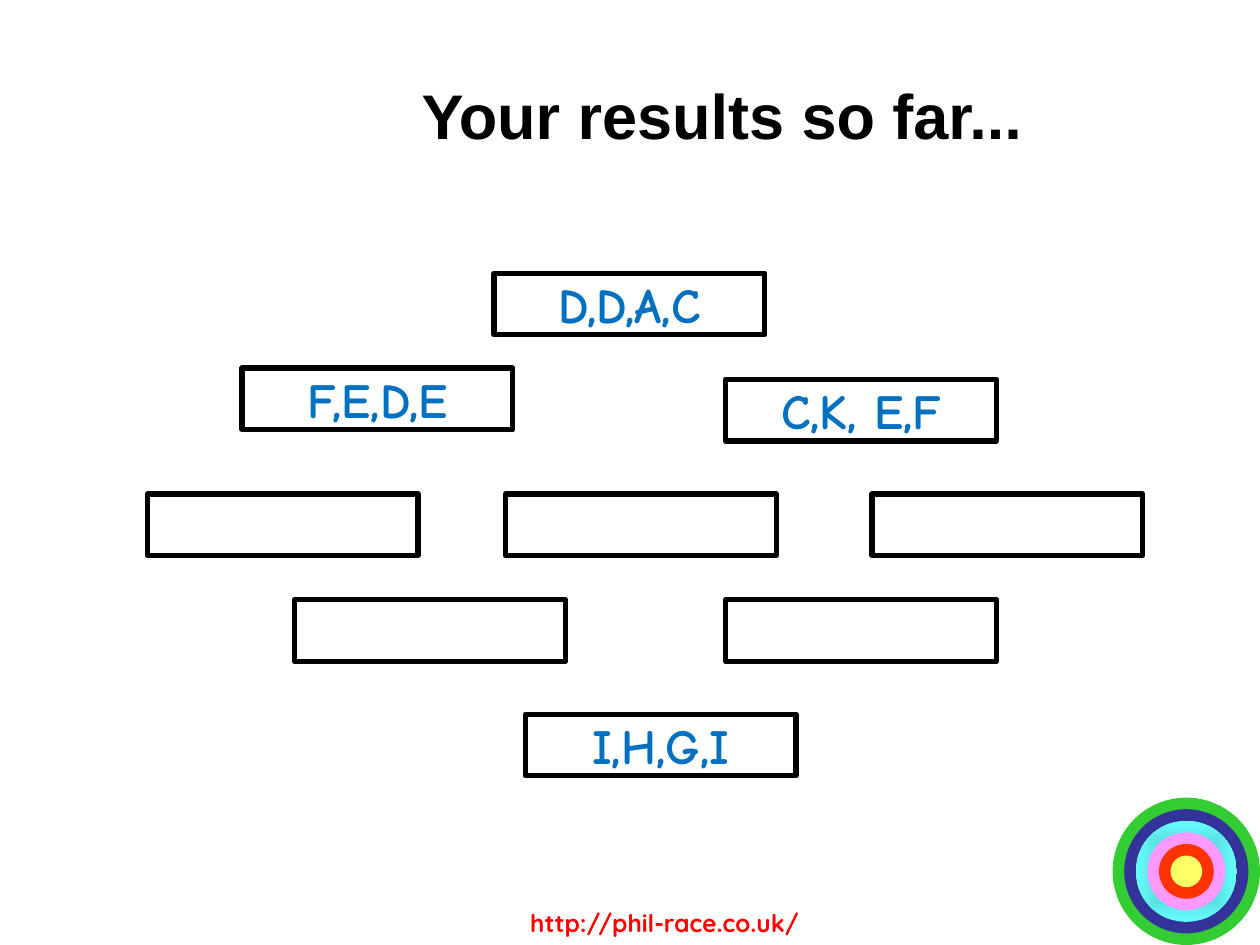
from lxml.etree import SubElement
from pptx import Presentation
from pptx.dml.color import RGBColor
from pptx.enum.shapes import MSO_SHAPE as Preset
from pptx.enum.text import MSO_ANCHOR as Anchor, PP_ALIGN as Align
from pptx.oxml.ns import qn
from pptx.util import Cm, Pt

TITLE_BOX = (3.71, 0.97, 21.69, 3.02)
DIAMOND_BOX = (2.97, 5.51, 20.07, 10.13)
TARGET_BOX = (22.43, 16.08, 2.97, 2.97)
ADDRESS_BOX = (9.73, 18.19, 7.34, 0.86)

TITLE_FONT = {"name": "Arial", "size": Pt(36), "bold": True}
RESULT_FONT = {"name": "Comic Neue", "size": Pt(28), "bold": True}
ADDRESS_FONT = {"name": "Quicksand", "size": Pt(14), "bold": True}

CARD_SIZE = (5.46, 1.24)
# Each row: distance from the top of the diamond, then (left, result) cards
DIAMOND_ROWS = [
    (0, [(6.99, "D,D,A,C")]),
    (1.91, [(1.91, "F,E,D,E")]),
    (2.14, [(11.66, "C,K, E,F")]),
    (4.45, [(0, ""), (7.22, ""), (14.61, "")]),
    (6.58, [(2.97, ""), (11.66, "")]),
    (8.89, [(7.62, "I,H,G,I")]),
]
RING_COLOURS = ["33CC33", "333399", "66FFFF", "FF99FF", "FF3300", "FFFF66"]
GLOW_RING = 2
GLOW_STOPS = [(0, "47B2B2"), (100000, "66FFFF")]


def colour(value):
    return RGBColor.from_string(value)


def lengths(box):
    return [Cm(value) for value in box]


def write(shape, text, font, text_colour):
    """Put one centred, formatted line of text in a shape."""
    para = shape.text_frame.paragraphs[0]
    para.alignment = Align.CENTER
    span = para.add_run()
    span.text = text
    for name, value in font.items():
        setattr(span.font, name, value)
    span.font.color.rgb = colour(text_colour)
    return para


def add_title(page, box):
    title = page.shapes.title
    title.left, title.top, title.width, title.height = lengths(box)
    title.text_frame.vertical_anchor = Anchor.MIDDLE
    para = write(title, "Your results so far...", TITLE_FONT, "000000")
    para.line_spacing = 0.75


def add_card(page, left, top, result):
    card = page.shapes.add_shape(Preset.RECTANGLE, *lengths((left, top, *CARD_SIZE)))
    card.shadow.inherit = False
    card.fill.background()
    card.line.color.rgb = colour("000000")
    card.line.width = Pt(3)
    if result:
        card.text_frame.word_wrap = False
        card.text_frame.vertical_anchor = Anchor.MIDDLE
        write(card, result, RESULT_FONT, "0070C0")


def add_diamond(page, box):
    """Lay out the nine ranking cards."""
    left, top, _, _ = box
    for down, cards in DIAMOND_ROWS:
        for across, result in cards:
            add_card(page, left + across, top + down, result)


def fill_with_glow(shape):
    """Fill a shape with a gradient that runs out from its centre."""
    shape.fill.background()
    old_fill = shape.fill._xPr.find(qn("a:noFill"))
    glow = old_fill.makeelement(qn("a:gradFill"), {"rotWithShape": "1"})
    stops = SubElement(glow, qn("a:gsLst"))
    for position, value in GLOW_STOPS:
        stop = SubElement(stops, qn("a:gs"), pos=str(position))
        SubElement(stop, qn("a:srgbClr"), val=value)
    gradient_path = SubElement(glow, qn("a:path"), {"path": "shape"})
    SubElement(gradient_path, qn("a:fillToRect"), dict.fromkeys("ltrb", "50000"))
    old_fill.getparent().replace(old_fill, glow)


def add_target(page, box):
    """Draw concentric rings, each inset by the same step."""
    left, top, size, _ = box
    step = size * 0.157 / 2
    for index, value in enumerate(RING_COLOURS):
        inset = index * step
        diameter = size - 2 * inset
        ring = page.shapes.add_shape(
            Preset.OVAL, *lengths((left + inset, top + inset, diameter, diameter)))
        ring.shadow.inherit = False
        ring.line.fill.background()
        if index == GLOW_RING:
            fill_with_glow(ring)
        else:
            ring.fill.solid()
            ring.fill.fore_color.rgb = colour(value)


def add_address(page, box):
    address = page.shapes.add_textbox(*lengths(box))
    address.text_frame.word_wrap = True
    write(address, "http://phil-race.co.uk/", ADDRESS_FONT, "FF0000")


def main():
    deck = Presentation()
    deck.slide_width, deck.slide_height = Cm(25.4), Cm(19.05)
    page = deck.slides.add_slide(deck.slide_layouts[5])
    add_target(page, TARGET_BOX)
    add_address(page, ADDRESS_BOX)
    add_title(page, TITLE_BOX)
    add_diamond(page, DIAMOND_BOX)
    deck.save("out.pptx")


if __name__ == "__main__":
    main()
